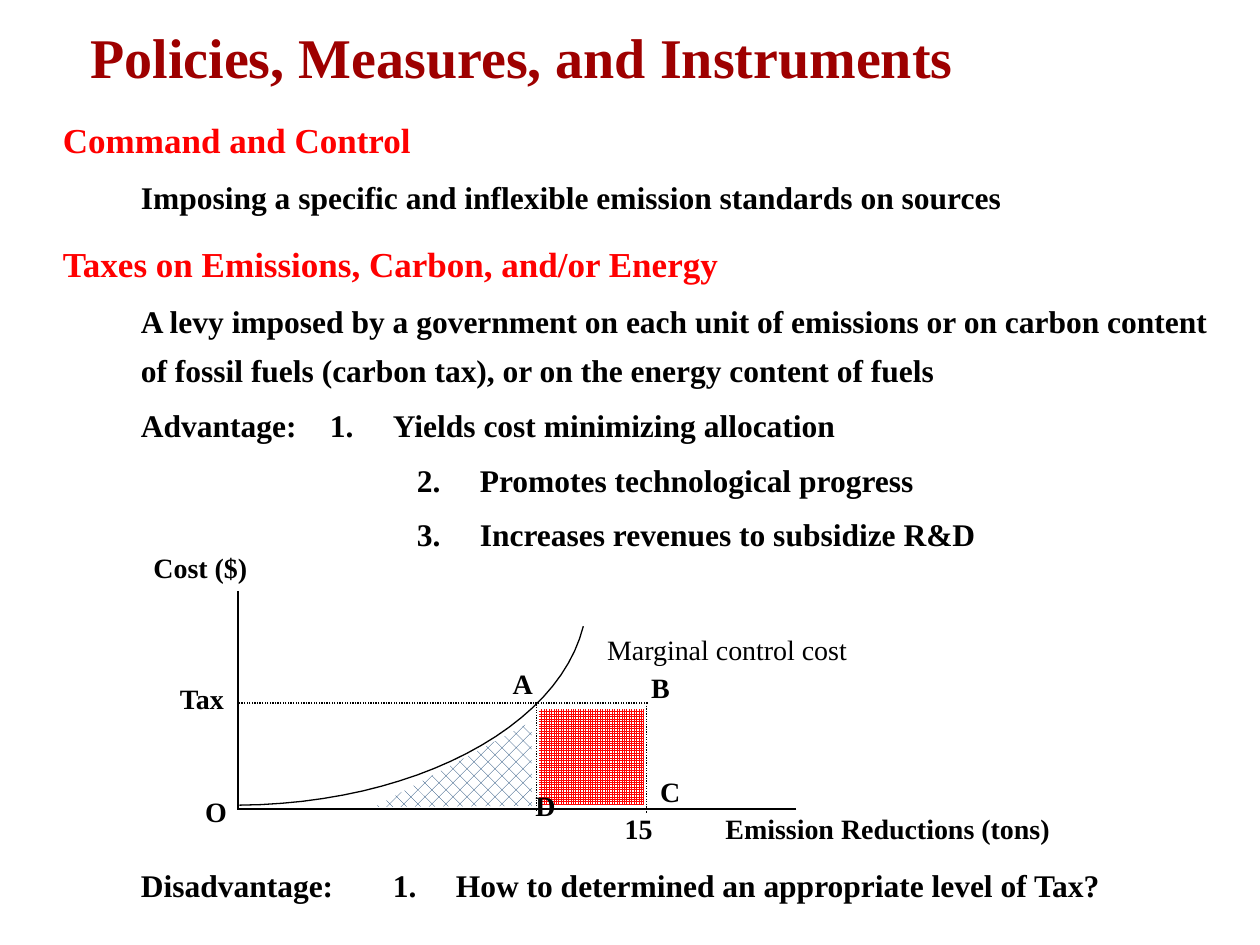
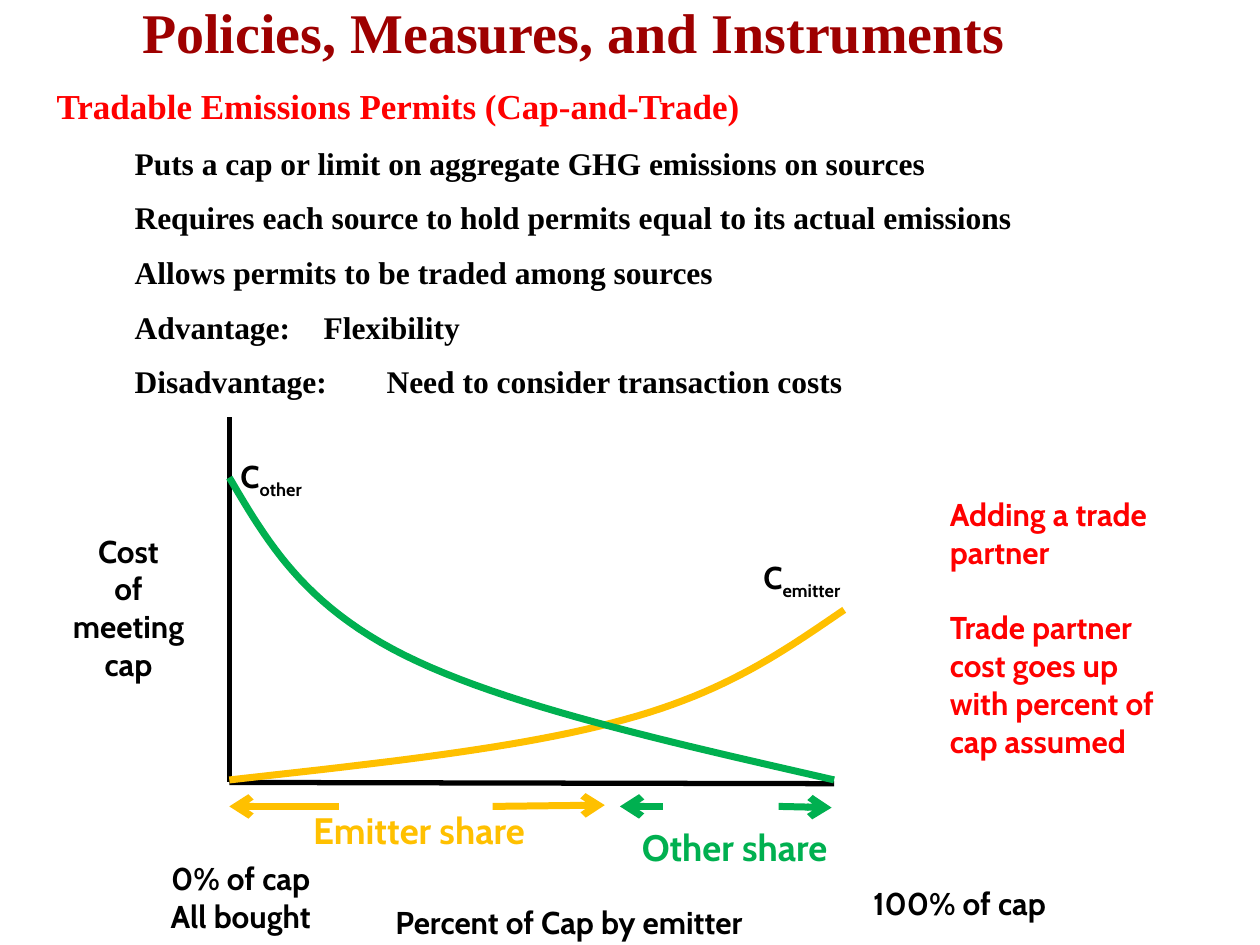
from collections import namedtuple
from dataclasses import dataclass

from lxml import etree
from pptx import Presentation
from pptx import util as u
from pptx.dml.color import RGBColor
from pptx.enum import dml, shapes, text
from pptx.oxml.ns import qn

PX = 9144  # 100 px to the inch
CURVE_STEPS = 24

Style = namedtuple("Style", "font size color bold")
Row = namedtuple("Row", "style indent space_before tabs text")


@dataclass(frozen=True)
class Theme:
    black: str = "000000"
    red: str = "FF0000"
    white: str = "FFFFFF"
    navy: str = "003366"
    amber: str = "FFC000"
    green: str = "00B050"
    title: Style = Style("Times New Roman", 32, "9E0000", True)
    heading: Style = Style("Times New Roman", 20, "FF0000", True)
    body: Style = Style("Times New Roman", 18, "000000", True)
    label: Style = Style("Times New Roman", 16, "000000", True)
    plain: Style = Style("Times New Roman", 16, "000000", False)
    caption: Style = Style("Cabin", 18, "000000", True)
    remark: Style = Style("Cabin", 18, "FF0000", True)
    emitter: Style = Style("Cabin", 21, "FFC000", True)
    other: Style = Style("Cabin", 21, "00B050", True)
    thin: float = 0.75
    axis: float = 3
    thick: float = 4


theme = Theme()
LEFT, CENTER = text.PP_ALIGN.LEFT, text.PP_ALIGN.CENTER
DOTTED = dml.MSO_LINE.ROUND_DOT


def add_text(slide, box, style, lines, align=LEFT):
    """Add a text box, one paragraph a line; what follows "_" is a subscript."""
    frame = slide.shapes.add_textbox(*[n * PX for n in box]).text_frame
    frame.word_wrap = True
    for index, line in enumerate(lines):
        paragraph = frame.paragraphs[0] if index == 0 else frame.add_paragraph()
        base, _, subscript = line.partition("_")
        paragraph.text = base
        paragraph.alignment = align
        if subscript:
            run = paragraph.add_run()
            run.text = subscript
            run._r.get_or_add_rPr().set("baseline", "-25000")
        for run in paragraph.runs:
            run.font.name = style.font
            run.font.size = u.Pt(style.size)
            run.font.bold = style.bold
            run.font.color.rgb = RGBColor.from_string(style.color)
    return frame


def style_line(shape, color, width):
    shape.line.color.rgb = RGBColor.from_string(color)
    shape.line.width = u.Pt(width)


# Text rows: style, indent, space before in points, tab stops, text
tax_rows = [
    Row(theme.heading, 19, 3.4, [], "Command and Control"),
    Row(theme.body, 81, 3.4, [], "Imposing a specific and inflexible emission standards on sources"),
    Row(theme.heading, 19, 8.5, [], "Taxes on Emissions, Carbon, and/or Energy"),
    Row(theme.body, 81, 3.4, [],
        "A levy imposed by a government on each unit of emissions or on carbon content "
        "of fossil fuels (carbon tax), or on the energy content of fuels"),
    Row(theme.body, 81, 3.2, [200, 300], "Advantage:\t1.\tYields cost minimizing allocation"),
    Row(theme.body, 300, 3.2, [62], "2.\tPromotes technological progress"),
    Row(theme.body, 300, 3.2, [62], "3.\tIncreases revenues to subsidize R&D"),
    Row(theme.body, 81, 172, [200, 232],
        "Disadvantage:\t1.\tHow to determined an appropriate level of Tax?"),
]
permit_rows = [
    Row(theme.heading, 19, 8.5, [], "Tradable Emissions Permits (Cap-and-Trade)"),
    Row(theme.body, 81, 3.4, [], "Puts a cap or limit on aggregate GHG emissions on sources"),
    Row(theme.body, 81, 3.2, [],
        "Requires each source to hold permits equal to its actual emissions"),
    Row(theme.body, 81, 3.2, [], "Allows permits to be traded among sources"),
    Row(theme.body, 81, 3.2, [200], "Advantage:\tFlexibility"),
    Row(theme.body, 81, 3.2, [200], "Disadvantage:\tNeed to consider transaction costs"),
]

# Lines: from x, y, to x, y, colour, width, dash, arrowhead
tax_lines = [
    (189, 469, 189, 643, theme.black, theme.thin, None, False),
    (632, 642, 188, 642, theme.black, theme.thin, None, False),
    (426, 557, 426, 644, theme.black, theme.thin, DOTTED, False),
    (514, 558, 190, 558, theme.black, theme.thin, DOTTED, False),
    (513, 558, 513, 645, theme.black, theme.thin, DOTTED, False),
]
permit_lines = [
    (182, 331, 182, 621, theme.black, theme.axis, None, False),
    (182, 621, 662, 622, theme.black, theme.axis, None, False),
    (269, 640, 182, 640, theme.amber, theme.thick, None, True),
    (391, 640, 480, 639, theme.amber, theme.thick, None, True),
    (526, 640, 492, 640, theme.green, theme.thick, None, True),
    (618, 640, 660, 641, theme.green, theme.thick, None, True),
]

# Curves: colour, width, start point and three points for each Bezier piece
tax_curves = [
    (theme.black, theme.thin, [(190, 639), (327, 638), (443, 578), (463, 497)]),
]
permit_curves = [
    (theme.amber, theme.thick, [(670, 484), (623, 516), (577, 549), (496, 571),
                                (414, 594), (298, 606), (182, 619)]),
    (theme.green, theme.thick, [(182, 379), (212, 430), (241, 480), (321, 520),
                                (401, 560), (531, 589), (662, 619)]),
]

# Hatched areas: preset, box, rotation, pattern, colour
tax_areas = [
    (shapes.MSO_SHAPE.RECTANGLE, (428, 563, 83, 76), 0,
     dml.MSO_PATTERN.SMALL_GRID, theme.red),
    (shapes.MSO_SHAPE.RIGHT_TRIANGLE, (326, 544, 67, 125), 269.6,
     dml.MSO_PATTERN.PERCENT_25, theme.navy),
]

# Labels: box, style, alignment, lines
tax_labels = [
    ((472, 497, 230, 37), theme.plain, LEFT, ["Marginal control cost"]),
    ((566, 639, 300, 37), theme.label, LEFT, ["Emission Reductions (tons)"]),
    ((112, 432, 103, 37), theme.label, LEFT, ["Cost ($)"]),
    ((133, 536, 103, 37), theme.label, LEFT, ["Tax"]),
]
for mark, x, y in [("15", 486, 639), ("D", 415, 621), ("A", 397, 524),
                   ("B", 507, 527), ("C", 514, 610), ("O", 153, 626)]:
    tax_labels.append(((x, y, 59, 37), theme.label, LEFT, [mark]))
permit_labels = [
    ((304, 712, 364, 38), theme.caption, LEFT, ["Percent of Cap by emitter"]),
    ((99, 677, 184, 38), theme.caption, CENTER, ["0% of cap", "All bought"]),
    ((660, 697, 203, 38), theme.caption, CENTER, ["100% of cap"]),
    ((205, 636, 255, 52), theme.emitter, CENTER, ["Emitter share"]),
    ((472, 650, 222, 39), theme.other, CENTER, ["Other share"]),
    ((44, 417, 116, 135), theme.caption, CENTER, ["Cost", "of meeting cap"]),
    ((596, 438, 102, 27), theme.caption, LEFT, ["C_emitter"]),
    ((181, 358, 115, 30), theme.caption, LEFT, ["C_other"]),
]

presentation = Presentation()
presentation.slide_width = 1000 * PX
presentation.slide_height = 750 * PX

pages = [
    ((62, 13, 750, 64), (21, 79, 958, 636), tax_rows,
     tax_curves, tax_lines, tax_areas, tax_labels),
    ((103, -7, 950, 64), (16, 52, 958, 636), permit_rows,
     permit_curves, permit_lines, [], permit_labels),
]
for title_box, body_box, rows, curves, lines, areas, labels in pages:
    slide = presentation.slides.add_slide(presentation.slide_layouts[6])
    add_text(slide, title_box, theme.title, ["Policies, Measures, and Instruments"])

    body = add_text(slide, body_box, theme.body, [row.text for row in rows])
    for paragraph, row in zip(body.paragraphs, rows):
        paragraph.line_spacing = 1.3
        paragraph.space_before = u.Pt(row.space_before)
        for run in paragraph.runs:
            run.font.size = u.Pt(row.style.size)
            run.font.color.rgb = RGBColor.from_string(row.style.color)
        properties = paragraph._p.get_or_add_pPr()
        properties.set("marL", str(row.indent * PX))
        properties.set("indent", "0")
        if row.tabs:
            tab_list = etree.SubElement(properties, qn("a:tabLst"))
            for stop in row.tabs:
                etree.SubElement(tab_list, qn("a:tab"), pos=str(stop * PX), algn="l")

    for x1, y1, x2, y2, color, width, dash, arrow in lines:
        connector = slide.shapes.add_connector(
            shapes.MSO_CONNECTOR.STRAIGHT, x1 * PX, y1 * PX, x2 * PX, y2 * PX)
        style_line(connector, color, width)
        if dash:
            connector.line.dash_style = dash
        if arrow:
            etree.SubElement(connector.line._get_or_add_ln(), qn("a:tailEnd"), type="arrow")
        etree.SubElement(connector._element.spPr, qn("a:effectLst"))

    for color, width, points in curves:
        outline = []
        for first in range(0, len(points) - 1, 3):
            piece = points[first:first + 4]
            for step in range(1, CURVE_STEPS + 1):
                t = step / CURVE_STEPS
                weights = ((1 - t) ** 3, 3 * t * (1 - t) ** 2, 3 * t * t * (1 - t), t ** 3)
                outline.append(tuple(
                    PX * sum(weight * point[axis] for weight, point in zip(weights, piece))
                    for axis in (0, 1)))
        builder = slide.shapes.build_freeform(points[0][0] * PX, points[0][1] * PX)
        builder.add_line_segments(outline, close=False)
        curve = builder.convert_to_shape()
        curve.fill.background()
        curve.shadow.inherit = False
        style_line(curve, color, width)

    for preset, box, rotation, pattern, color in areas:
        area = slide.shapes.add_shape(preset, *[n * PX for n in box])
        area.rotation = rotation
        area.shadow.inherit = False
        area.line.fill.background()
        area.fill.patterned()
        area.fill.pattern = pattern
        area.fill.fore_color.rgb = RGBColor.from_string(color)
        area.fill.back_color.rgb = RGBColor.from_string(theme.white)

    for box, style, align, label_lines in labels:
        add_text(slide, box, style, label_lines, align)

remark = add_text(slide, (744, 388, 183, 252), theme.remark,
                  ["Adding a trade partner",
                   "Trade partner cost goes up with percent of cap assumed"])
remark.paragraphs[1].space_before = u.Pt(21.6)

presentation.save("out.pptx")
